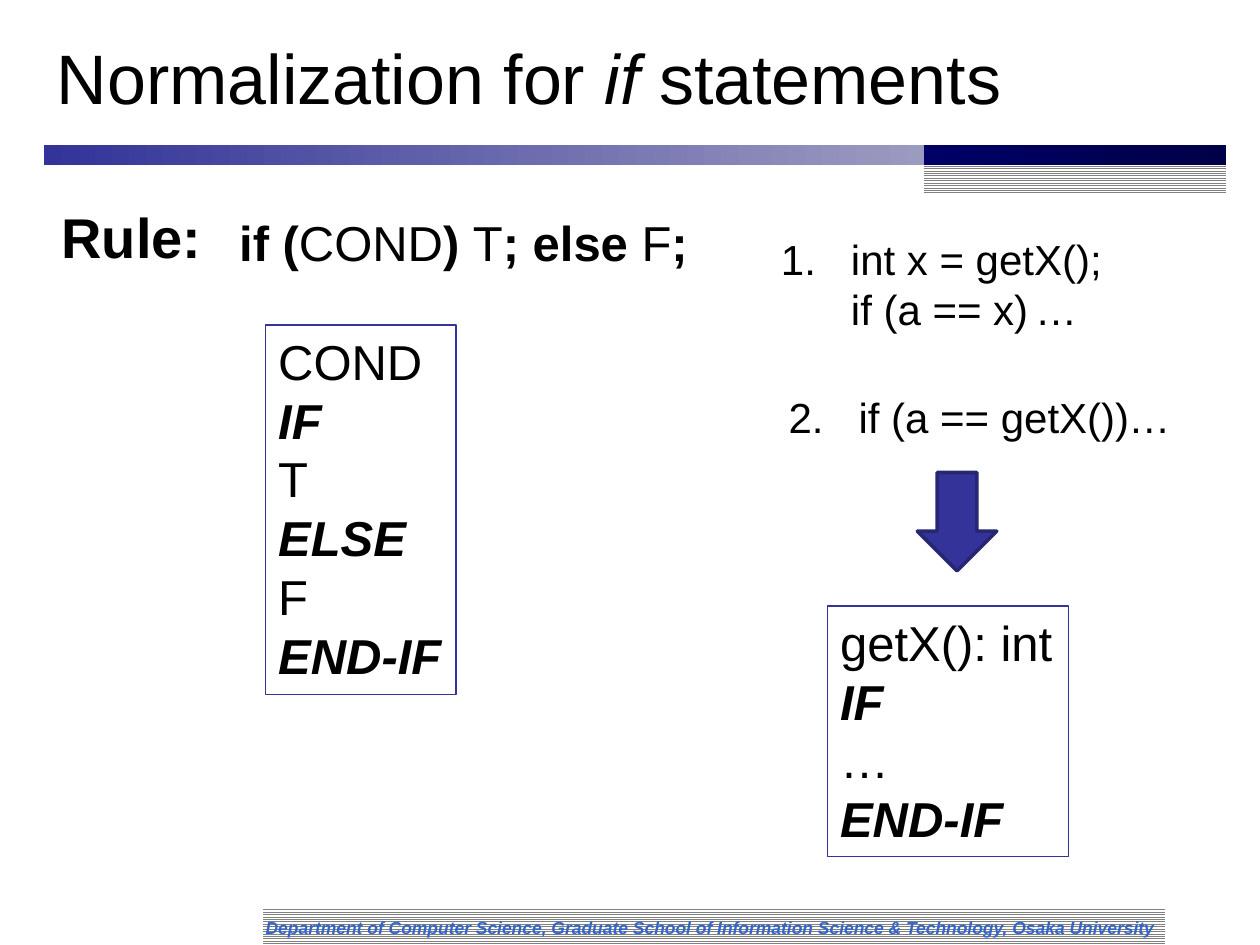
import pptx
import pptx.util
import pptx.dml.color
import pptx.enum.dml
import pptx.enum.shapes
import pptx.enum.text
import lxml.etree

Pt = pptx.util.Pt
kinds = pptx.enum.shapes.MSO_SHAPE
anchors = pptx.enum.text.MSO_ANCHOR


def color(code):
    return pptx.dml.color.RGBColor.from_string(code)


def write(frame, lines, size, code="000000"):
    for i, line in enumerate(lines):
        para = frame.paragraphs[0] if i == 0 else frame.add_paragraph()
        para.font.size = Pt(size)
        para.font.name = "Arial"
        para.font.color.rgb = color(code)
        styles = {style for text, style in line}
        for text, style in line:
            run = para.add_run()
            run.text = text
            font = para.font if len(styles) == 1 else run.font
            font.bold = "b" in style
            font.italic = "i" in style


deck = pptx.Presentation()
deck.slide_width = Pt(720)
deck.slide_height = Pt(540)
slide = deck.slides.add_slide(deck.slide_layouts[5])
shapes = slide.shapes

stripes = [(150.5, 518.4, 515.5, 21.6), (527.8, 89.3, 172.8, 21.6)]
for area in stripes:
    stripe = shapes.add_shape(kinds.RECTANGLE, *map(Pt, area))
    stripe.shadow.inherit = False
    stripe.line.fill.background()
    stripe.fill.patterned()
    stripe.fill.pattern = pptx.enum.dml.MSO_PATTERN.LIGHT_HORIZONTAL
    stripe.fill.fore_color.rgb = color("808080")
    stripe.fill.back_color.rgb = color("FFFFFF")

bars = [(25.2, 502.6, "333399", "9B9BC0"), (527.8, 172.8, "000066", "000049")]
for left, width, start, end in bars:
    bar = shapes.add_shape(kinds.RECTANGLE, Pt(left), Pt(82.8), Pt(width), Pt(11.5))
    bar.shadow.inherit = False
    bar.line.fill.background()
    bar.fill.gradient()
    bar.fill.gradient_angle = 0
    for stop, code in zip(bar.fill.gradient_stops, (start, end)):
        stop.color.rgb = color(code)

title = shapes.title
title.left, title.top, title.width, title.height = map(Pt, (25.2, 9.4, 675.4, 68.4))
title.text_frame.vertical_anchor = anchors.MIDDLE
write(title.text_frame, [[("Normalization for ", ""), ("if", "i"), (" statements", "")]], 40)
title.text_frame.paragraphs[0].alignment = pptx.enum.text.PP_ALIGN.LEFT

school = "Department of Computer Science, Graduate School of Information Science & Technology, Osaka University"
rule = [("if (", "b"), ("COND", ""), (") ", "b"), ("T", ""), ("; else ", "b"), ("F", ""), (";", "b")]
labels = [
    ((144.7, 520.6, 527, 19.4), [(school, "bi")], 10, "3366CC"),
    ((28.1, 112.3, 95, 46), [("Rule:", "b")], 32, "000000"),
    ((129.6, 118.1, 274.3, 41), rule, 28, "000000"),
]
for area, line, size, code in labels:
    label = shapes.add_textbox(*map(Pt, area))
    label.text_frame.word_wrap = size == 10
    if size == 10:
        label.text_frame.vertical_anchor = anchors.MIDDLE
    write(label.text_frame, [line], size, code)

frames = [
    ((151.9, 185.8, 108.7, 211), ["COND", "IF", "T", "ELSE", "F", "END-IF"]),
    ((473, 346.3, 137.5, 143.3), ["getX(): int", "IF", "…", "END-IF"]),
]
marks = {"IF", "ELSE", "END-IF"}
for area, words in frames:
    box = shapes.add_textbox(*map(Pt, area))
    box.line.color.rgb = color("333399")
    box.line.width = Pt(0.75)
    box.text_frame.word_wrap = False
    write(box.text_frame, [[(word, "bi" if word in marks else "")] for word in words], 28)

cases = [
    ((439.2, 129.6, 199.4, 65.5), 1, ["int x = getX();", "if (a == x)\t…"], 156.5),
    ((443.5, 220.3, 248.4, 36), 2, ["if (a == getX())\t…"], 209),
]
space = "{http://schemas.openxmlformats.org/drawingml/2006/main}"
for area, start, lines, gap in cases:
    case = shapes.add_textbox(*map(Pt, area))
    frame = case.text_frame
    frame.word_wrap = False
    for i in range(1, len(lines)):
        frame.add_paragraph()
    for i, (para, line) in enumerate(zip(frame.paragraphs, lines)):
        props = para._p.get_or_add_pPr()
        props.set("marL", str(Pt(40)))
        props.set("indent", str(0 if i else -Pt(40)))
        if i == 0:
            lxml.etree.SubElement(props, space + "buFont", typeface="+mj-lt")
            lxml.etree.SubElement(props, space + "buAutoNum", type="arabicPeriod", startAt=str(start))
        if "\t" in line:
            tabs = lxml.etree.SubElement(props, space + "tabLst")
            lxml.etree.SubElement(tabs, space + "tab", pos=str(Pt(gap)), algn="l")
        para.font.size = Pt(24)
        para.font.name = "Arial"
        para.font.color.rgb = color("000000")
        para.add_run().text = line

arrow = shapes.add_shape(kinds.DOWN_ARROW, Pt(524.2), Pt(270), Pt(45.4), Pt(56.2))
arrow.shadow.inherit = False
arrow.fill.solid()
arrow.fill.fore_color.rgb = color("333399")
arrow.line.color.rgb = color("262671")
arrow.line.width = Pt(2)

deck.save("out.pptx")
